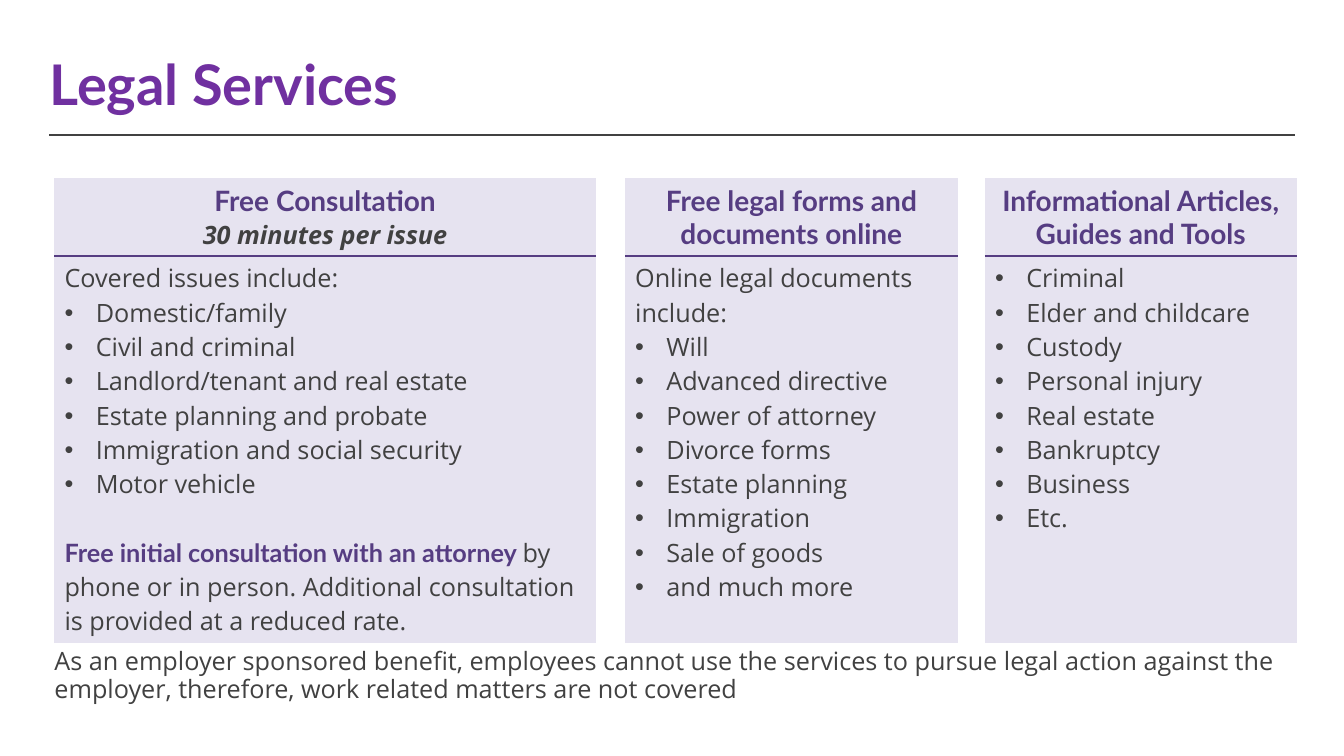
from dataclasses import dataclass

from lxml.etree import SubElement
from pptx import Presentation
from pptx.dml.color import RGBColor
from pptx.enum.shapes import MSO_CONNECTOR
from pptx.enum.text import MSO_ANCHOR, PP_ALIGN
from pptx.oxml import parse_xml
from pptx.oxml.ns import nsdecls, qn
from pptx.slide import Slide
from pptx.table import _Cell as Cell
from pptx.text.text import TextFrame, _Paragraph as Paragraph
from pptx.util import Emu, Pt

EMU_PER_PX = 9144
TITLE_PURPLE = "7030A0"
PURPLE = "563D82"
LILAC = "E6E3F0"
GREY = "414141"
WHITE = "FFFFFF"
NO_STYLE = "{2D5ABB26-0587-4C30-8999-92F81FD0307C}"
BULLET_INDENT = 31
GAP_AFTER_LIST = 24.5


@dataclass(frozen=True)
class Style:
    font: str
    size: int
    color: str
    bold: bool = False
    italic: bool = False


@dataclass(frozen=True)
class Span:
    text: str
    style: Style


TITLE = Style("Lato", 40, TITLE_PURPLE, bold=True)
HEADING = Style("Lato", 20, PURPLE, bold=True)
SUBHEADING = Style("Open Sans", 18, GREY, bold=True, italic=True)
STRONG = Style("Lato", 18, PURPLE, bold=True)
BODY = Style("Open Sans", 18, GREY)


@dataclass(frozen=True)
class Service:
    width: int
    gap: int
    heading: list[Span]
    intro: str
    items: list[str]
    closing: tuple[Span, ...] = ()


SERVICES = [
    Service(
        537, 29,
        [Span("Free Consultation", HEADING), Span("30 minutes per issue", SUBHEADING)],
        "Covered issues include:",
        ["Domestic/family", "Civil and criminal", "Landlord/tenant and real estate",
         "Estate planning and probate", "Immigration and social security", "Motor vehicle"],
        (Span("Free initial consultation with an attorney ", STRONG),
         Span("by phone or in person. Additional consultation is provided at a reduced rate.", BODY)),
    ),
    Service(
        330, 27,
        [Span("Free legal forms and documents online", HEADING)],
        "Online legal documents include:",
        ["Will", "Advanced directive", "Power of attorney", "Divorce forms",
         "Estate planning", "Immigration", "Sale of goods", "and much more"],
    ),
    Service(
        309, 38,
        [Span("Informational Articles, Guides and Tools", HEADING)],
        "",
        ["Criminal", "Elder and childcare", "Custody", "Personal injury",
         "Real estate", "Bankruptcy", "Business", "Etc."],
    ),
]


def px(length: int) -> Emu:
    return Emu(length * EMU_PER_PX)


def rgb(color: str) -> RGBColor:
    return RGBColor.from_string(color)


def add_span(para: Paragraph, span: Span) -> None:
    run = para.add_run()
    run.text = span.text
    font = run.font
    font.name = span.style.font
    font.size = Pt(span.style.size)
    font.bold = span.style.bold
    font.italic = span.style.italic
    font.color.rgb = rgb(span.style.color)


def next_paragraph(frame: TextFrame) -> Paragraph:
    first = frame.paragraphs[0]
    return frame.add_paragraph() if first.runs else first


def add_bullet(para: Paragraph) -> None:
    properties = para._p.get_or_add_pPr()
    properties.set("marL", str(px(BULLET_INDENT)))
    properties.set("indent", str(px(-BULLET_INDENT)))
    SubElement(properties, qn("a:buFont")).set("typeface", "Arial")
    SubElement(properties, qn("a:buChar")).set("char", "•")


def add_text(slide: Slide, left: int, top: int, width: int, height: int, span: Span) -> TextFrame:
    box = slide.shapes.add_textbox(px(left), px(top), px(width), px(height))
    frame = box.text_frame
    frame.word_wrap = True
    frame.margin_left = frame.margin_right = frame.margin_top = frame.margin_bottom = 0
    add_span(frame.paragraphs[0], span)
    return frame


def fill_cell(cell: Cell, color: str) -> None:
    cell.fill.solid()
    cell.fill.fore_color.rgb = rgb(color)


def add_border(cell: Cell, side: str) -> None:
    border = parse_xml(
        f'<a:{side} {nsdecls("a")} w="{Pt(1)}"><a:solidFill>'
        f'<a:srgbClr val="{PURPLE}"/></a:solidFill></a:{side}>'
    )
    cell._tc.get_or_add_tcPr().insert(0, border)


def fill_heading(cell: Cell, service: Service) -> None:
    fill_cell(cell, LILAC)
    add_border(cell, "lnB")
    cell.vertical_anchor = MSO_ANCHOR.BOTTOM
    for span in service.heading:
        para = next_paragraph(cell.text_frame)
        para.alignment = PP_ALIGN.CENTER
        add_span(para, span)


def fill_body(cell: Cell, service: Service) -> None:
    fill_cell(cell, LILAC)
    add_border(cell, "lnT")
    frame = cell.text_frame
    if service.intro:
        add_span(next_paragraph(frame), Span(service.intro, BODY))
    for item in service.items:
        para = next_paragraph(frame)
        add_bullet(para)
        add_span(para, Span(item, BODY))
    if service.closing:
        para = next_paragraph(frame)
        para.space_before = Pt(GAP_AFTER_LIST)
        for span in service.closing:
            add_span(para, span)


def add_services(slide: Slide) -> None:
    widths = [width for service in SERVICES for width in (service.width, service.gap)]
    heights = [77, 384]
    shape = slide.shapes.add_table(
        len(heights), len(widths), px(54), px(177), px(sum(widths)), px(sum(heights))
    )
    table = shape.table
    table.first_row = table.horz_banding = False
    table._tbl.tblPr.find(qn("a:tableStyleId")).text = NO_STYLE
    for column, width in zip(table.columns, widths):
        column.width = px(width)
    for row, height in zip(table.rows, heights):
        row.height = px(height)
    for index, service in enumerate(SERVICES):
        fill_heading(table.cell(0, 2 * index), service)
        fill_body(table.cell(1, 2 * index), service)
        for row_index in range(len(heights)):
            fill_cell(table.cell(row_index, 2 * index + 1), WHITE)


def add_rule(slide: Slide, left: int, right: int, y: int) -> None:
    rule = slide.shapes.add_connector(MSO_CONNECTOR.STRAIGHT, px(left), px(y), px(right), px(y))
    rule.line.color.rgb = rgb(GREY)
    rule.line.width = Pt(1.5)
    SubElement(rule._element.spPr, qn("a:effectLst"))


def main() -> None:
    deck = Presentation()
    deck.slide_width, deck.slide_height = px(1333), px(750)
    page = deck.slides.add_slide(deck.slide_layouts[6])
    add_rule(page, 49, 1284, 134)
    title = add_text(page, 49, 47, 1235, 80, Span("Legal Services", TITLE))
    title.vertical_anchor = MSO_ANCHOR.MIDDLE
    title.paragraphs[0].line_spacing = 0.9
    note = add_text(page, 54, 644, 1222, 77, Span(
        "As an employer sponsored benefit, employees cannot use the services to pursue legal "
        "action against the employer, therefore, work related matters are not covered", BODY))
    note.paragraphs[0].line_spacing = 0.9
    add_services(page)
    deck.save("out.pptx")


if __name__ == "__main__":
    main()
